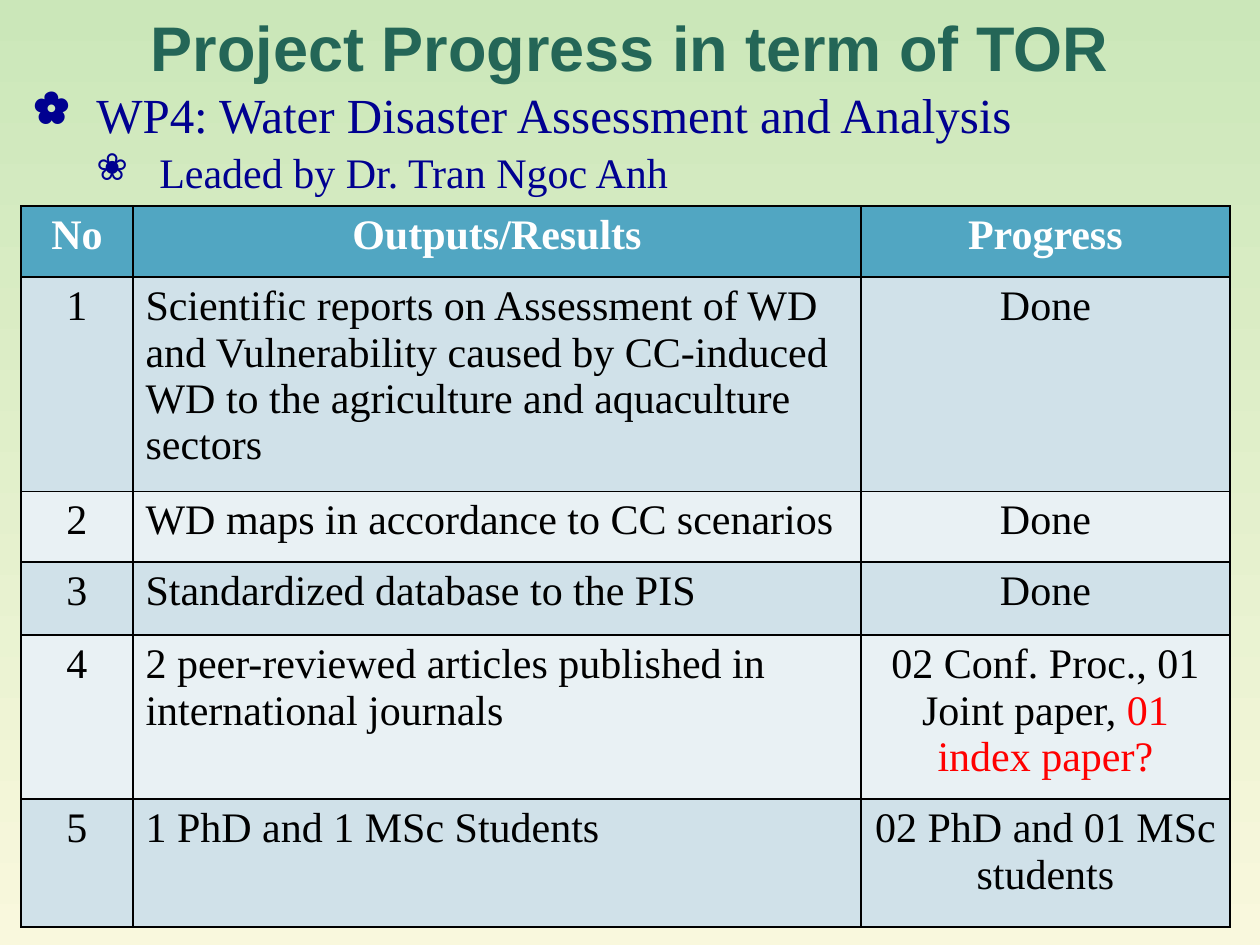
from pptx import Presentation
from pptx.dml.color import RGBColor
from pptx.enum.text import MSO_ANCHOR, PP_ALIGN
from pptx.oxml.ns import qn
from pptx.util import Pt
from lxml.etree import SubElement

# Content
TITLE = "Project Progress in term of TOR"
# text, bullet, size, indent in px, space before
BULLETS = [
    ("WP4: Water Disaster Assessment and Analysis", "✿", 28, 63, 0),
    ("Leaded by Dr. Tran Ngoc Anh", "❀", 24, 126, 2),
]
HEADER = ("No", "Outputs/Results", "Progress")
# output, progress, open question
RESULTS = [
    ("Scientific reports on Assessment of WD and Vulnerability caused by "
     "CC-induced WD to the agriculture and aquaculture sectors", "Done", ""),
    ("WD maps in accordance to CC scenarios", "Done", ""),
    ("Standardized database to the PIS", "Done", ""),
    ("2 peer-reviewed articles published in international journals",
     "02 Conf. Proc., 01 Joint paper, ", "01 index paper?"),
    ("1 PhD and 1 MSc Students", "02 PhD and 01 MSc students", ""),
]

# Layout in px, 126 to the inch
SCALE = 914400 / 126
PAGE = (1260, 945)
TITLE_BOX = (63, 14, 1134, 72)
BULLET_BOX = (21, 78, 1210, 74)
TABLE_LEFT, TABLE_TOP = 21, 206
COLUMNS = (112, 728, 369)
ROWS = (71, 126, 71, 73, 129, 128)
HANGING = 63

COLORS = {
    "top": "CBE7B9", "bottom": "F9F8DD", "title": "246657", "bullet": "000090",
    "header": "51A6C2", "odd": "D0E1E9", "even": "E9F1F4",
    "white": "FFFFFF", "black": "000000", "question": "FF0000",
}


def px(length):
    return round(length * SCALE)


def color(name):
    return RGBColor.from_string(COLORS[name])


def style(font, face, size, shade, bold=False):
    font.name, font.size, font.bold = face, Pt(size), bold
    font.color.rgb = color(shade)


def add_text_box(page, frame, anchor):
    box = page.shapes.add_textbox(*map(px, frame))
    box.text_frame.word_wrap = True
    box.text_frame.vertical_anchor = anchor
    return box.text_frame


def add_bullet(para, symbol, indent):
    props = para._p.get_or_add_pPr()
    props.set("marL", str(px(indent)))
    props.set("indent", str(-px(HANGING)))
    SubElement(props, qn("a:buSzPct"), val="90000")
    SubElement(props, qn("a:buChar"), char=symbol)


def add_borders(cell):
    props = cell._tc.get_or_add_tcPr()
    for side in ("lnL", "lnR", "lnT", "lnB"):
        line = SubElement(props, qn(f"a:{side}"), w=str(Pt(1)))
        fill = SubElement(line, qn("a:solidFill"))
        SubElement(fill, qn("a:srgbClr"), val=COLORS["black"])


def fill_cell(cell, text, question, fill, shade, bold, align):
    add_borders(cell)
    cell.fill.solid()
    cell.fill.fore_color.rgb = color(fill)
    para = cell.text_frame.paragraphs[0]
    para.alignment = align
    style(para.font, "Times New Roman", 24, shade, bold)
    para.add_run().text = text
    if question:
        span = para.add_run()
        span.text = question
        span.font.color.rgb = color("question")


def main():
    deck = Presentation()
    deck.slide_width, deck.slide_height = map(px, PAGE)
    page = deck.slides.add_slide(deck.slide_layouts[6])

    # Background, running from top to bottom
    background = page.background.fill
    background.gradient()
    background.gradient_angle = 270
    for stop, name, position in zip(background.gradient_stops, ("top", "bottom"), (0, 1)):
        stop.color.rgb = color(name)
        stop.position = position

    # Title
    para = add_text_box(page, TITLE_BOX, MSO_ANCHOR.MIDDLE).paragraphs[0]
    para.text = TITLE
    para.alignment = PP_ALIGN.CENTER
    para.line_spacing = 0.95
    style(para.font, "Arial", 36, "title", True)

    # Bullets
    frame = add_text_box(page, BULLET_BOX, MSO_ANCHOR.TOP)
    for level, (text, symbol, size, indent, before) in enumerate(BULLETS):
        para = frame.add_paragraph() if level else frame.paragraphs[0]
        para.text = text
        para.level = level
        add_bullet(para, symbol, indent)
        para.space_before = Pt(before)
        style(para.font, "Times New Roman", size, "bullet")

    # Results table
    table = page.shapes.add_table(
        len(ROWS), len(COLUMNS),
        *map(px, (TABLE_LEFT, TABLE_TOP, sum(COLUMNS), sum(ROWS)))).table
    table.horz_banding = False
    for column, width in zip(table.columns, COLUMNS):
        column.width = px(width)
    for row, height in zip(table.rows, ROWS):
        row.height = px(height)

    for index, text in enumerate(HEADER):
        fill_cell(table.cell(0, index), text, "", "header", "white", True, PP_ALIGN.CENTER)
    for number, (output, progress, question) in enumerate(RESULTS, 1):
        fill = "odd" if number % 2 else "even"
        cells = (
            (str(number), "", PP_ALIGN.CENTER),
            (output, "", PP_ALIGN.LEFT),
            (progress, question, PP_ALIGN.CENTER),
        )
        for index, (text, extra, align) in enumerate(cells):
            fill_cell(table.cell(number, index), text, extra, fill, "black", False, align)

    deck.save("out.pptx")


if __name__ == "__main__":
    main()
